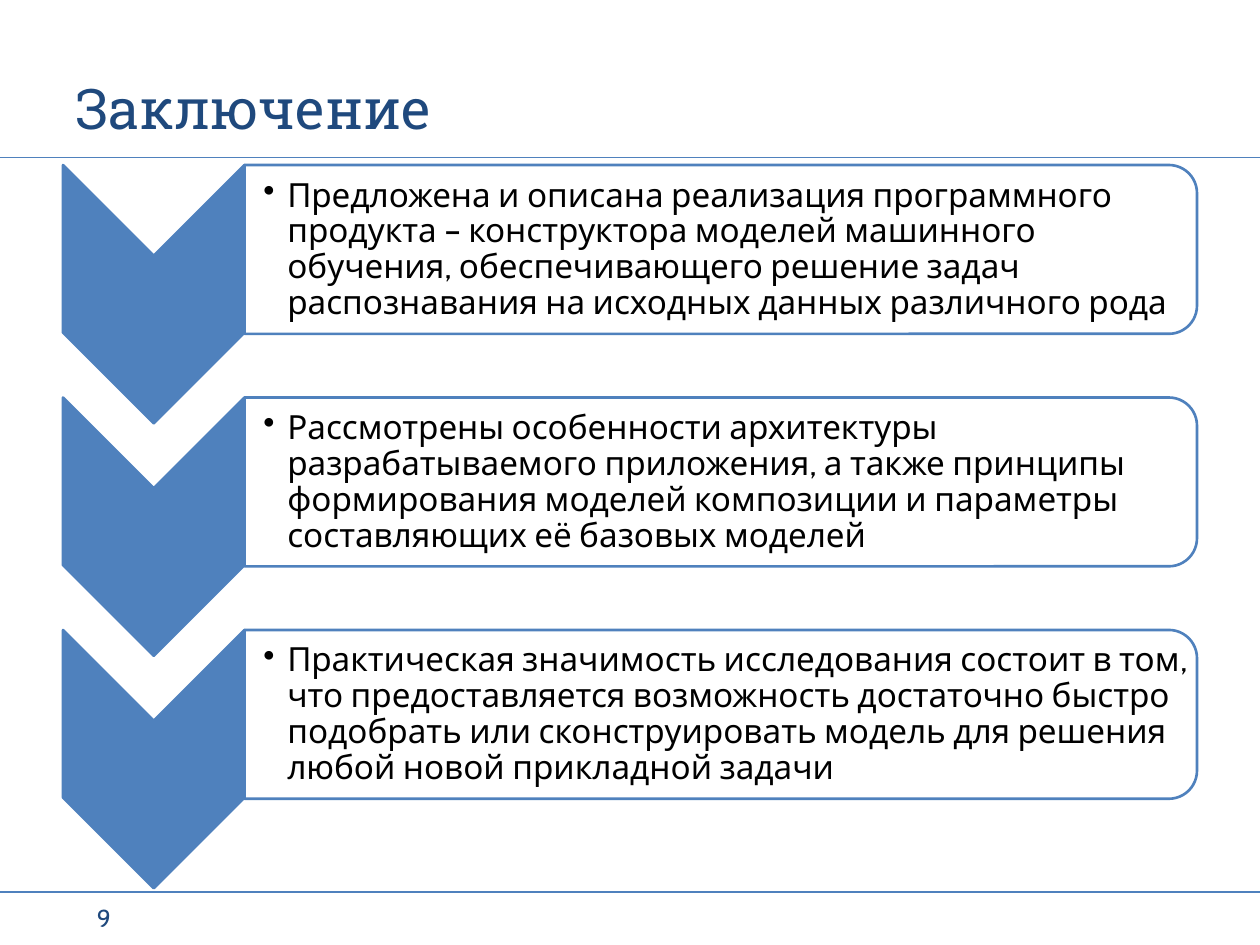
"""Build the conclusion slide: three chevrons, each with a rounded panel of text."""
from lxml import etree
from pptx import Presentation, util as u
from pptx.dml.color import RGBColor
from pptx.enum import dml, shapes, text
from pptx.oxml import ns

BLUE = RGBColor(0x4F, 0x81, 0xBD)
NAVY = RGBColor(0x1F, 0x49, 0x7D)
RED = RGBColor(0xC0, 0x50, 0x4D)
BLACK = RGBColor(0, 0, 0)
WHITE = RGBColor(255, 255, 255)

WIDTH, HEIGHT = 10, 7.5
MARGIN = WIDTH * 0.05
TITLE_RULE = HEIGHT / 6
FOOTER_RULE = 7.08
ROW_TOP, ROW_PITCH = 1.31, 3.69 / 2
CHEVRON_LENGTH, CHEVRON_WIDTH = 2.05, 1.44
PANEL_LEFT, PANEL_WIDTH, PANEL_HEIGHT = 1.94, 7.56, 1.34
CONCLUSIONS = [
    "Предложена и описана реализация программного продукта – конструктора моделей машинного обучения, обеспечивающего решение задач распознавания на исходных данных различного рода",
    "Рассмотрены особенности архитектуры разрабатываемого приложения, а также принципы формирования моделей композиции и параметры составляющих её базовых моделей",
    "Практическая значимость исследования состоит в том, что предоставляется возможность достаточно быстро подобрать или сконструировать модель для решения любой новой прикладной задачи",
]


def add_words(words, *, place, size, font, color, anchor=text.MSO_ANCHOR.TOP,
              insets=(0.1, 0.05, 0.1, 0.05), bullet=False):
    box = page.shapes.add_textbox(*map(u.Inches, place))
    frame = box.text_frame
    frame.word_wrap = True
    frame.vertical_anchor = anchor
    (frame.margin_left, frame.margin_top,
     frame.margin_right, frame.margin_bottom) = map(u.Inches, insets)
    para = frame.paragraphs[0]
    span = para.add_run()
    span.text = words
    if bullet:
        props = para._p.get_or_add_pPr()
        props.set("marL", str(u.Inches(0.19)))
        props.set("indent", str(u.Inches(-0.19)))
        etree.SubElement(props, ns.qn("a:buChar")).set("char", "•")
        para.line_spacing = 0.9
        para.space_after = u.Pt(3)
    span.font.size = u.Pt(size)
    span.font.name = font
    span.font.color.rgb = color


def add_turned(kind, center_x, center_y, length, breadth, fill):
    shape = page.shapes.add_shape(
        kind, u.Inches(center_x - length / 2), u.Inches(center_y - breadth / 2),
        u.Inches(length), u.Inches(breadth))
    shape.rotation = 90
    shape.shadow.inherit = False
    shape.fill.solid()
    shape.fill.fore_color.rgb = fill
    shape.line.color.rgb = BLUE
    shape.line.width = u.Pt(1.5)
    return shape


deck = Presentation()
deck.slide_width, deck.slide_height = u.Inches(WIDTH), u.Inches(HEIGHT)
page = deck.slides.add_slide(deck.slide_layouts[6])

for left, right, level, color, dash in [
    (MARGIN, WIDTH - MARGIN, TITLE_RULE, RED, dml.MSO_LINE.DASH),
    (0, WIDTH, TITLE_RULE, BLUE, None),
    (0, WIDTH, FOOTER_RULE, BLUE, None),
]:
    rule = page.shapes.add_connector(
        shapes.MSO_CONNECTOR.STRAIGHT, u.Inches(left), u.Inches(level),
        u.Inches(right), u.Inches(level))
    rule.line.color.rgb = color
    rule.line.width = u.Pt(0.75)
    rule.line.dash_style = dash
    etree.SubElement(rule._element.spPr, ns.qn("a:effectLst"))

add_words("Заключение", place=(MARGIN, 0.17, 8.2, 1), size=32,
          font="Roboto Slab", color=NAVY, anchor=text.MSO_ANCHOR.BOTTOM)
add_words("9", place=(0.67, 7.12, 2.17, 0.33), size=14, font="Cabin", color=NAVY)

for row, conclusion in enumerate(CONCLUSIONS):
    top = ROW_TOP + row * ROW_PITCH
    add_turned(shapes.MSO_SHAPE.CHEVRON, PANEL_LEFT - CHEVRON_WIDTH / 2,
               top + CHEVRON_LENGTH / 2, CHEVRON_LENGTH, CHEVRON_WIDTH, BLUE)
    panel = add_turned(shapes.MSO_SHAPE.ROUND_2_SAME_RECTANGLE,
                       PANEL_LEFT + PANEL_WIDTH / 2, top + PANEL_HEIGHT / 2,
                       PANEL_HEIGHT, PANEL_WIDTH, WHITE)
    tint = panel._element.spPr.find(ns.qn("a:solidFill"))[0]
    etree.SubElement(tint, ns.qn("a:alpha")).set("val", "90000")
    add_words(conclusion, place=(PANEL_LEFT, top + 0.07, 7.5, 1.21), size=19,
              font="Cabin", color=BLACK, anchor=text.MSO_ANCHOR.MIDDLE,
              insets=(0.15, 0.01, 0.01, 0.01), bullet=True)

deck.save("out.pptx")
